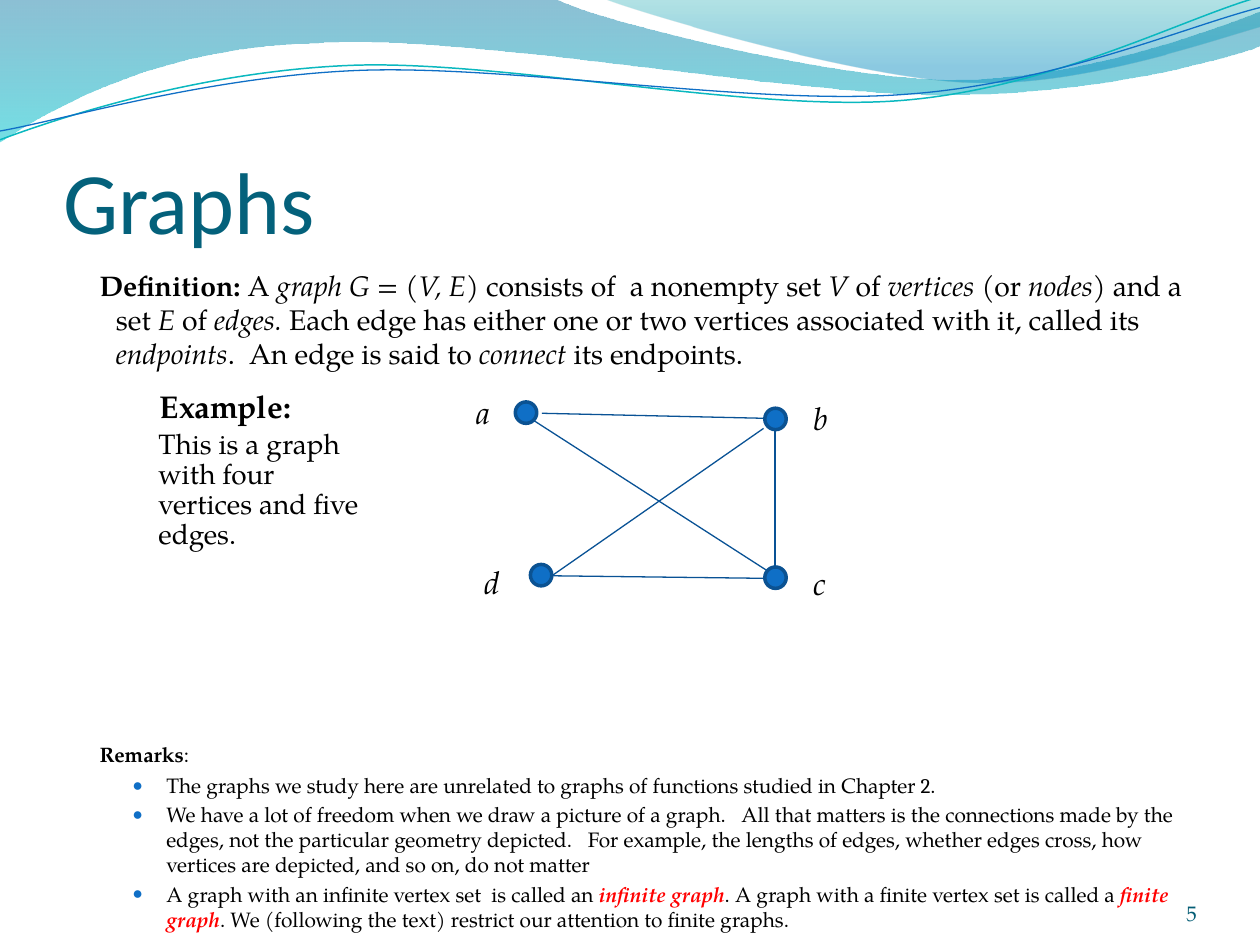
from dataclasses import dataclass

from lxml import etree
from pptx import Presentation
from pptx.dml.color import RGBColor
from pptx.enum.shapes import MSO_CONNECTOR, MSO_SHAPE
from pptx.enum.text import MSO_ANCHOR, MSO_AUTO_SIZE, PP_ALIGN
from pptx.oxml.ns import qn
from pptx.util import Inches, Pt

LINE, OVAL = MSO_CONNECTOR.STRAIGHT, MSO_SHAPE.OVAL
BOTTOM, TOP = MSO_ANCHOR.BOTTOM, MSO_ANCHOR.TOP
LEFT, RIGHT = PP_ALIGN.LEFT, PP_ALIGN.RIGHT
NO_FIT = MSO_AUTO_SIZE.NONE

BLACK = RGBColor(0, 0, 0)
RED = RGBColor(0xFF, 0, 0)
BLUE = RGBColor(0x0F, 0x6F, 0xC6)
NODE_LINE = RGBColor(0x0B, 0x52, 0x92)
EDGE = RGBColor(0x09, 0x52, 0x95)
TITLE = RGBColor(0x04, 0x61, 0x7B)
NUMBER = RGBColor(0x04, 0x5D, 0x75)
TEAL = RGBColor(0x0A, 0xB8, 0xBF)
SERIF, SANS = "TeX Gyre Pagella", "Calibri"

# Run styles: name -> font attributes
STYLES = {
    "": {},
    "b": {"bold": True},
    "i": {"italic": True},
    "red": {"bold": True, "italic": True, "color": RED},
    "digit": {"name": "Cambria"},
}


@dataclass
class Wave:
    """Points are a start, then (x, y) line ends or six-number Bezier curves."""
    points: list
    stops: tuple = ()  # (position, colour, opacity percent)
    color: RGBColor = None
    width: float = 0


@dataclass
class Vertex:
    name: str
    x: float
    y: float
    label_x: float
    label_y: float


@dataclass
class Para:
    runs: list
    size: float
    before: float
    left: float = 0.3
    indent: float = -0.13
    bullet: bool = False


WAVES = [
    Wave([(0, 0), (4.4, -0.01), (4.76, 0.17, 6.64, 0.63, 7.58, 0.63),
          (8.53, 0.63, 9.58, 0.26, 10, 0.09), (10.01, 0.36),
          (9.83, 0.44, 8.7, 0.76, 7.46, 0.75), (6.22, 0.75, 3.82, 0.28, 2.57, 0.34),
          (1.29, 0.36, 0.46, 0.83, -0.01, 1.13)],
         stops=((0, RGBColor(0, 0x74, 0xA1), 45), (1, RGBColor(0, 0xC6, 0xCF), 55))),
    Wave([(4.79, -0.01), (5.09, 0.11, 6.82, 0.62, 7.69, 0.65),
          (8.56, 0.69, 9.61, 0.32, 10, 0.21), (10, 0)],
         stops=((0, RGBColor(0, 0xA1, 0xA9), 30), (0.8, RGBColor(0, 0x8B, 0xBF), 45))),
    Wave([(0, 1.11), (0.48, 0.93, 1.58, 0.57, 2.77, 0.52),
          (3.95, 0.47, 5.93, 0.89, 7.13, 0.8), (8.33, 0.71, 9.38, 0.15, 9.98, -0.02)],
         color=TEAL, width=0.85),
    Wave([(0, 1.04), (0.47, 0.96, 1.64, 0.61, 2.83, 0.56),
          (4.03, 0.51, 5.97, 0.84, 7.17, 0.75), (8.36, 0.67, 9.41, 0.21, 10, 0.06)],
         color=BLUE, width=0.75),
]
VERTICES = [
    Vertex("a", 4.09, 3.19, 3.68, 3.07),
    Vertex("b", 6.07, 3.24, 6.36, 3.12),
    Vertex("c", 6.07, 4.5, 6.36, 4.43),
    Vertex("d", 4.21, 4.48, 3.75, 4.42),
]
EDGES = [(4.24, 3.34, 6.09, 4.53), (4.38, 4.57, 6.06, 3.4), (4.3, 3.28, 6.06, 3.32),
         (6.15, 3.4, 6.15, 4.5), (4.38, 4.57, 6.06, 4.59)]

BULLET = {"size": 11.9, "left": 0.7, "indent": -0.27, "bullet": True}
BODY = [
    Para([("Definition:", "b"), (" A ", ""), ("graph G = ", "i"), ("(", ""), ("V, E", "i"),
          (") consists of  a nonempty set ", ""), ("V", "i"), (" of ", ""),
          ("vertices ", "i"), ("(or ", ""), ("nodes", "i"), (") and a set ", ""),
          ("E", "i"), (" of ", ""), ("edges. ", "i"),
          ("Each edge has either one or two vertices associated with it, called its ", ""),
          ("endpoints", "i"), (".  An edge is said to ", ""), ("connect", "i"),
          (" its endpoints.", "")], 16.2, 0),
    Para([("Remarks", "b"), (":", "")], 11.9, 212.3),
    Para([("The graphs we study here are unrelated to graphs of functions studied in "
           "Chapter ", ""), ("2", "digit"), (".", "")], before=3.4, **BULLET),
    Para([("We have a lot of freedom when we draw a picture of a graph.   All that matters "
           "is the connections made by the edges, not the particular geometry depicted.   "
           "For example, the lengths of edges, whether edges cross, how vertices are "
           "depicted, and so on, do not matter", "")], before=2.4, **BULLET),
    Para([("A graph with an infinite vertex set  is called an ", ""),
          ("infinite graph", "red"), (". A graph with a finite vertex set is called a ", ""),
          ("finite graph", "red"),
          (". We (following the text) restrict our attention to finite graphs.", "")],
         before=2.4, **BULLET),
]


def place(sp, *box: float) -> None:
    for name, value in zip(("left", "top", "width", "height"), box):
        setattr(sp, name, Inches(value))


def add_run(p, text: str, size: float, style: dict) -> None:
    r = p.add_run()
    r.text = text
    fmt = {"name": SERIF, "color": BLACK, **style}
    r.font.color.rgb = fmt.pop("color")
    r.font.size = Pt(size)
    for name, value in fmt.items():
        setattr(r.font, name, value)


def set_frame(tf, anchor=TOP, insets: tuple = (0.1, 0.05, 0.1, 0.05)) -> None:
    tf.word_wrap, tf.auto_size, tf.vertical_anchor = True, NO_FIT, anchor
    for side, value in zip(("left", "top", "right", "bottom"), insets):
        setattr(tf, f"margin_{side}", Inches(value))


def add_text(s, box: tuple, text: str, size: float, style: dict, **frame):
    tf = s.shapes.add_textbox(*map(Inches, box)).text_frame
    set_frame(tf, **frame)
    add_run(tf.paragraphs[0], text, size, style)
    return tf.paragraphs[0]


def bend(sp, pieces: list) -> None:
    """Turn the line segments that stand for curves into Bezier curves."""
    segments = list(sp._element.spPr.iter(qn("a:lnTo")))
    for segment, piece in zip(segments, pieces):
        if len(piece) == 2:
            continue
        segment.tag = qn("a:cubicBezTo")
        segment.clear()
        for x, y in zip(piece[::2], piece[1::2]):
            pt = etree.SubElement(segment, qn("a:pt"))
            pt.set("x", str(Inches(x) - sp.left))
            pt.set("y", str(Inches(y) - sp.top))


def draw_wave(s, wave: Wave) -> None:
    start, *rest = [tuple(map(Inches, point[-2:])) for point in wave.points]
    builder = s.shapes.build_freeform(*start)
    builder.add_line_segments(rest, close=bool(wave.stops))
    sp = builder.convert_to_shape()
    bend(sp, wave.points[1:])
    sp.shadow.inherit = False
    if not wave.stops:
        sp.fill.background()
        sp.line.color.rgb, sp.line.width = wave.color, Pt(wave.width)
        return
    sp.line.fill.background()
    sp.fill.gradient()
    sp.fill.gradient_angle = 270
    for stop, (position, color, _) in zip(sp.fill.gradient_stops, wave.stops):
        stop.position, stop.color.rgb = position, color
    colors = list(sp._element.spPr.iter(qn("a:srgbClr")))
    for clr, (_, _, opacity) in zip(colors, wave.stops):
        etree.SubElement(clr, qn("a:alpha")).set("val", str(opacity * 1000))


def draw_edge(s, edge: tuple) -> None:
    line = s.shapes.add_connector(LINE, *map(Inches, edge))
    line.line.color.rgb, line.line.width = EDGE, Pt(0.75)
    etree.SubElement(line._element.spPr, qn("a:effectLst"))


def draw_vertex(s, v: Vertex) -> None:
    sp = s.shapes.add_shape(OVAL, *map(Inches, (v.x, v.y, 0.17, 0.17)))
    sp.shadow.inherit = False
    sp.fill.solid()
    sp.fill.fore_color.rgb = BLUE
    sp.line.color.rgb, sp.line.width = NODE_LINE, Pt(2)
    add_text(s, (v.label_x, v.label_y, 0.35, 0.4), v.name, 18, STYLES["i"])


def fill_para(p, para: Para) -> None:
    p.alignment, p.space_before = LEFT, Pt(para.before)
    pPr = p._p.get_or_add_pPr()
    pPr.set("marL", str(Inches(para.left)))
    pPr.set("indent", str(Inches(para.indent)))
    if para.bullet:
        pPr.set("lvl", "1")
        clr = etree.SubElement(pPr, qn("a:buClr"))
        etree.SubElement(clr, qn("a:srgbClr")).set("val", str(BLUE))
        etree.SubElement(pPr, qn("a:buSzPct")).set("val", "85000")
        etree.SubElement(pPr, qn("a:buChar")).set("char", "●")
    else:
        etree.SubElement(pPr, qn("a:buNone"))
    for text, style in para.runs:
        add_run(p, text, para.size, STYLES[style])


def main() -> None:
    prs = Presentation()
    prs.slide_width, prs.slide_height = Inches(10), Inches(7.5)
    s = prs.slides.add_slide(prs.slide_layouts[1])
    for wave in WAVES:
        draw_wave(s, wave)

    # Title and body
    title, body = s.placeholders
    place(title, 0.5, 0.75, 9, 1.25)
    set_frame(title.text_frame, BOTTOM, (0, 0.05, 0, 0))
    p = title.text_frame.paragraphs[0]
    p.alignment = LEFT
    add_run(p, "Graphs", 50, {"name": SANS, "color": TITLE})
    place(body, 0.52, 2.08, 9, 4.8)
    tf = body.text_frame
    set_frame(tf)
    for k, para in enumerate(BODY):
        fill_para(tf.add_paragraph() if k else tf.paragraphs[0], para)

    # Example graph
    for edge in EDGES:
        draw_edge(s, edge)
    for vertex in VERTICES:
        draw_vertex(s, vertex)
    add_text(s, (1.17, 3.02, 1.38, 0.4), "Example:", 18, STYLES["b"])
    p = add_text(s, (1.16, 3.37, 1.83, 1.05),
                 "This is a graph with four vertices and five edges.", 16, {})
    p.line_spacing = Pt(17)

    # Slide number
    p = add_text(s, (8.67, 6.95, 0.83, 0.4), "5", 12, {"color": NUMBER},
                 anchor=BOTTOM, insets=(0, 0, 0, 0))
    p.alignment = RIGHT
    prs.save("out.pptx")


if __name__ == "__main__":
    main()
